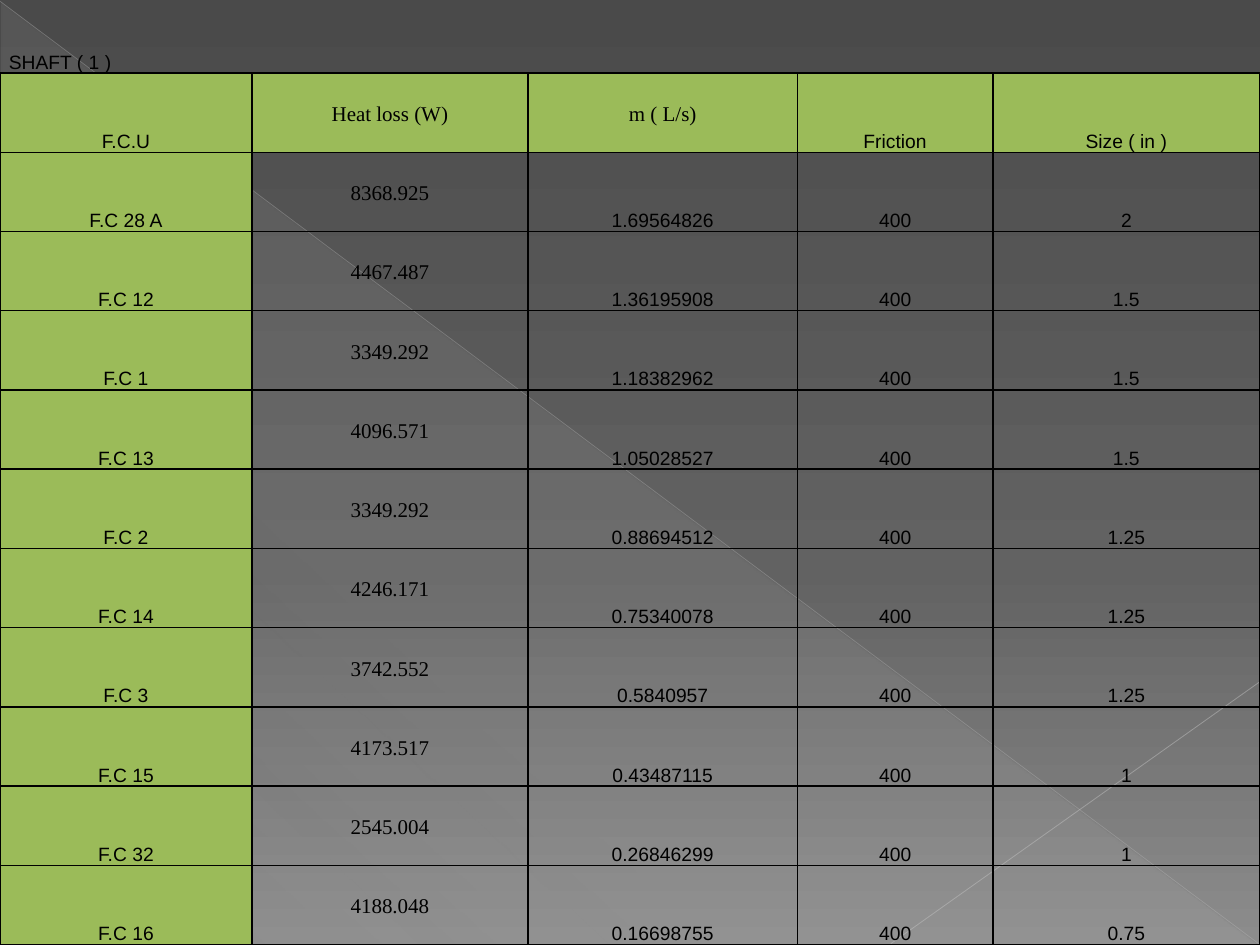
from lxml import etree
from pptx import Presentation
from pptx.dml.color import RGBColor
from pptx.enum.shapes import MSO_CONNECTOR, MSO_SHAPE
from pptx.enum.text import MSO_ANCHOR, PP_ALIGN
from pptx.oxml import parse_xml
from pptx.oxml.ns import nsdecls, qn
from pptx.util import Inches, Pt

STRAIGHT = MSO_CONNECTOR.STRAIGHT
RIGHT_TRIANGLE = MSO_SHAPE.RIGHT_TRIANGLE
LEFT, CENTER = PP_ALIGN.LEFT, PP_ALIGN.CENTER
BOTTOM, MIDDLE = MSO_ANCHOR.BOTTOM, MSO_ANCHOR.MIDDLE

WIDTH, HEIGHT = 10, 7.5
TITLE_HEIGHT = 0.58
COLUMN_WIDTHS = [2, 2.19, 2.14, 1.55, 2.12]
GREEN, BLACK = "9BBB59", "000000"
NO_STYLE = "{2D5ABB26-0587-4C30-8999-92F81FD0307C}"

TITLE = "SHAFT ( 1 )"
HEADERS = ["F.C.U", "Heat loss (W)", "m ( L/s)", "Friction", "Size ( in )"]
FRICTION = "400"
UNITS = [
    ("F.C 28 A", "8368.925", "1.69564826", "2"),
    ("F.C 12", "4467.487", "1.36195908", "1.5"),
    ("F.C 1", "3349.292", "1.18382962", "1.5"),
    ("F.C 13", "4096.571", "1.05028527", "1.5"),
    ("F.C 2", "3349.292", "0.88694512", "1.25"),
    ("F.C 14", "4246.171", "0.75340078", "1.25"),
    ("F.C 3", "3742.552", "0.5840957", "1.25"),
    ("F.C 15", "4173.517", "0.43487115", "1"),
    ("F.C 32", "2545.004", "0.26846299", "1"),
    ("F.C 16", "4188.048", "0.16698755", "0.75"),
]


def rgb(hex_color):
    return RGBColor.from_string(hex_color)


def set_alpha(color_element, percent):
    etree.SubElement(color_element, qn("a:alpha"), val=str(percent * 1000))


def set_gradient(fill, root, stops, angle):
    """Give fill, found below root, (position, colour, opacity) stops; angle is clockwise."""
    fill.gradient()
    gradient = root.find(".//" + qn("a:gradFill"))
    stop_list = gradient.find(qn("a:gsLst"))
    for old_stop in list(stop_list):
        stop_list.remove(old_stop)
    for position, color, opacity in stops:
        stop = etree.SubElement(stop_list, qn("a:gs"), pos=str(position * 1000))
        set_alpha(etree.SubElement(stop, qn("a:srgbClr"), val=color), opacity)
    gradient.find(qn("a:lin")).set("ang", str(angle * 60000))


def add_sheen(slide):
    sheen = slide.shapes.add_shape(
        RIGHT_TRIANGLE, Inches(0.01), Inches(0.02), Inches(9.98), Inches(7.48))
    sheen.shadow.inherit = False
    sheen.line.fill.background()
    stops = [(0, "D2D2D2", 10), (70, "D2D2D2", 8), (100, "D2D2D2", 1)]
    set_gradient(sheen.fill, sheen.element, stops, 133)


def add_ray(slide, start, end, color, width, opacity):
    ray = slide.shapes.add_connector(STRAIGHT, *map(Inches, start + end))
    ray.line.color.rgb = rgb(color)
    ray.line.width = Pt(width)
    properties = ray.element.spPr
    set_alpha(properties.find(".//" + qn("a:srgbClr")), opacity)
    etree.SubElement(properties, qn("a:effectLst"))


def set_borders(cell, sides):
    properties = cell._tc.get_or_add_tcPr()
    for index, side in enumerate(sides):
        properties.insert(index, parse_xml(
            f'<a:ln{side} {nsdecls("a")} w="12700"><a:solidFill>'
            f'<a:srgbClr val="{BLACK}"/></a:solidFill></a:ln{side}>'))


def write_cell(cell, text, font="Arial", size=11, align=CENTER, anchor=BOTTOM):
    cell.margin_left = cell.margin_right = Inches(0.07)
    cell.margin_top = cell.margin_bottom = 0
    cell.vertical_anchor = anchor
    paragraph = cell.text_frame.paragraphs[0]
    paragraph.alignment = align
    paragraph.line_spacing = 1.15
    run = paragraph.add_run()
    run.text = text
    run.font.name = font
    run.font.size = Pt(size)
    run.font.color.rgb = rgb(BLACK)


def add_shaft_table(slide):
    records = [HEADERS] + [
        (unit, heat, flow, FRICTION, size) for unit, heat, flow, size in UNITS]
    frame = slide.shapes.add_table(
        len(records) + 1, len(HEADERS), 0, 0, Inches(WIDTH), Inches(HEIGHT))
    table = frame.table
    table.first_row = table.horz_banding = False
    table._tbl.tblPr.find(qn("a:tableStyleId")).text = NO_STYLE
    for column, width in zip(table.columns, COLUMN_WIDTHS):
        column.width = Inches(width)
    for row in table.rows:
        row.height = Inches((HEIGHT - TITLE_HEIGHT) / len(records))
    table.rows[0].height = Inches(TITLE_HEIGHT)

    for column in range(len(HEADERS)):
        title_cell = table.cell(0, column)
        title_cell.fill.background()
        set_borders(title_cell, "B")
    table.cell(0, 0).merge(table.cell(0, 1))
    write_cell(table.cell(0, 0), TITLE, align=LEFT)

    for row, record in enumerate(records, start=1):
        is_header = row == 1
        for column, text in enumerate(record):
            cell = table.cell(row, column)
            if is_header or column == 0:
                cell.fill.solid()
                cell.fill.fore_color.rgb = rgb(GREEN)
            else:
                cell.fill.background()
            set_borders(cell, "LRTB")
            if column == 1 or (is_header and column == 2):
                write_cell(cell, text, font="Times New Roman", size=12, anchor=MIDDLE)
            else:
                write_cell(cell, text)


def main():
    presentation = Presentation()
    presentation.slide_width = Inches(WIDTH)
    presentation.slide_height = Inches(HEIGHT)
    slide = presentation.slides.add_slide(presentation.slide_layouts[6])
    backdrop = [(0, "4A4A4A", 100), (60, "626262", 100), (100, "8C8C8C", 100)]
    set_gradient(slide.background.fill, slide.element, backdrop, 90)
    add_sheen(slide)
    add_ray(slide, (0, 0.01), (9.99, 7.49), "BFBFBF", 0.39, 35)
    add_ray(slide, (WIDTH, 5.41), (7.07, 7.49), "C6C6C6", 0.47, 45)
    add_shaft_table(slide)
    presentation.save("out.pptx")


if __name__ == "__main__":
    main()
